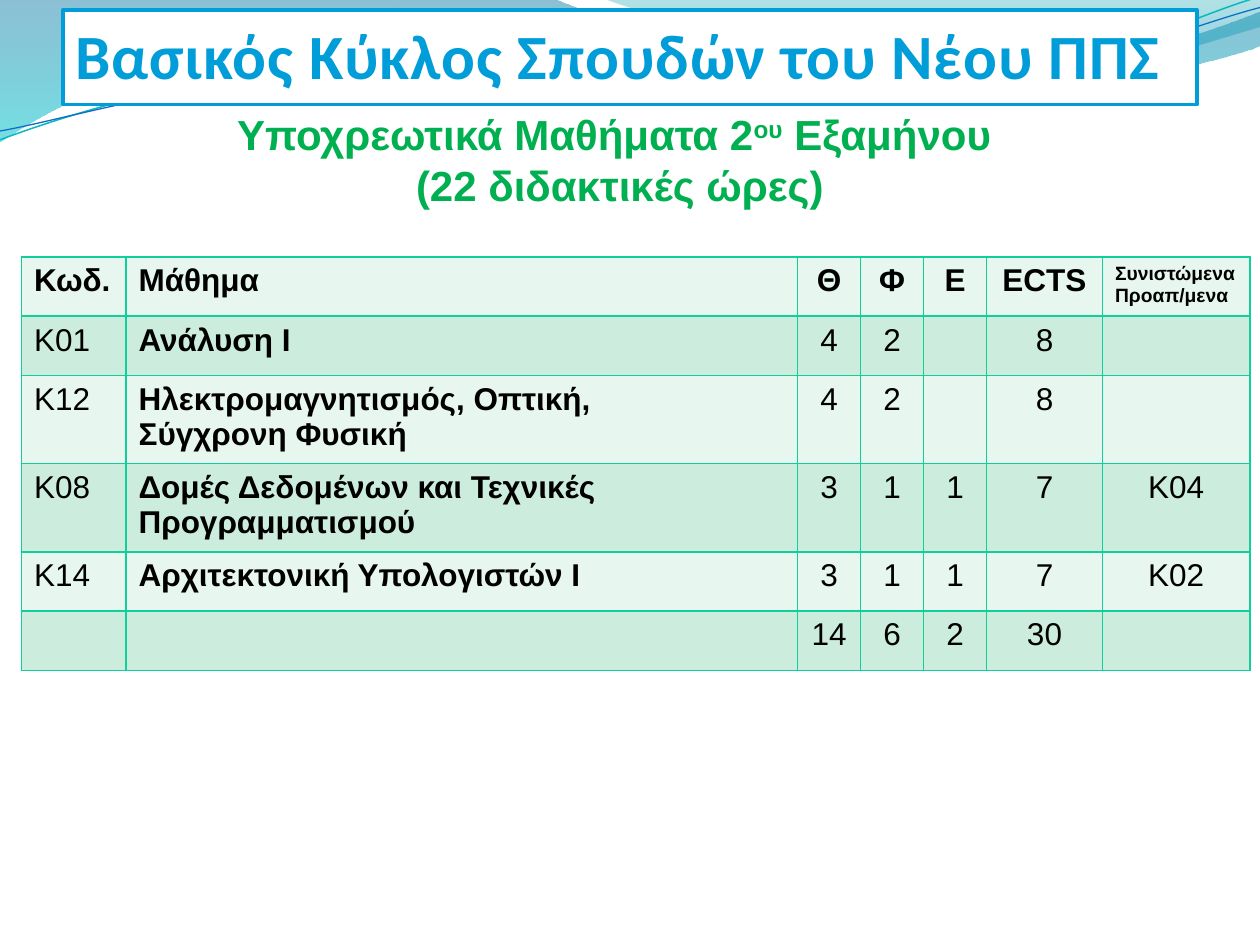
from pptx import Presentation
from pptx import util as u
from pptx.dml.color import RGBColor
from pptx.enum import text as t
from pptx.oxml import parse_xml
from pptx.oxml.ns import nsdecls, qn
from lxml import etree

COLORS = {
    "white": "FFFFFF", "black": "000000", "title": "009DD9", "subtitle": "00B050",
    "border": "10CF9B", "light": "E7F6EF", "dark": "CCEDDE",
    "deep_blue": "0074A1", "cyan": "00C6CF", "teal": "00A1A9", "blue": "008BBF",
    "teal_line": "0AB8BF", "blue_line": "0F6FC6",
}
LEFT, CENTER = t.PP_ALIGN.LEFT, t.PP_ALIGN.CENTER
UNITS = 1000  # outline units per inch


def color(name):
    return RGBColor.from_string(COLORS[name])


def write(paragraph, content, size=18, font="Arial", fill="black", bold=False,
          align=LEFT, **attributes):
    """Add text to a paragraph; a newline becomes a line break."""
    paragraph.alignment = align
    for index, line in enumerate(content.split("\n")):
        if index:
            paragraph.add_line_break()
        run = paragraph.add_run()
        run.text = line
        run.font.size, run.font.name, run.font.bold = u.Pt(size), font, bold
        run.font.color.rgb = color(fill)
        for key, value in attributes.items():
            run.font._element.set(key, str(value))


class SlideBuilder:
    def __init__(self, presentation):
        self.slide = presentation.slides.add_slide(presentation.slide_layouts[5])
        self.shapes = self.slide.shapes

    def outline(self, start, segments, close):
        """Draw line (x, y) and cubic curve (six numbers) segments."""
        points = [(segment[i] * UNITS, segment[i + 1] * UNITS)
                  for segment in segments for i in range(0, len(segment), 2)]
        builder = self.shapes.build_freeform(
            start[0] * UNITS, start[1] * UNITS, scale=u.Inches(1) / UNITS)
        builder.add_line_segments(points, close=close)
        shape = builder.convert_to_shape()
        shape.shadow.inherit = False
        lines = iter(list(shape._element.iter(qn("a:lnTo"))))
        for segment in segments:
            first = next(lines)
            if len(segment) == 6:  # merge three points into one curve
                first.tag = qn("a:cubicBezTo")
                for extra in (next(lines), next(lines)):
                    first.append(extra[0])
                    extra.getparent().remove(extra)
        return shape

    def wave(self, start, segments, stops):
        """Filled wave; each stop is (position, colour, opacity percent)."""
        shape = self.outline(start, segments, True)
        shape.line.fill.background()
        shape.fill.gradient()
        shape.fill.gradient_angle = 270
        for stop, (position, name, _) in zip(shape.fill.gradient_stops, stops):
            stop.position = position
            stop.color.rgb = color(name)
        stop_colors = shape._element.spPr.iter(qn("a:srgbClr"))
        for element, (_, _, opacity) in zip(list(stop_colors), stops):
            etree.SubElement(element, qn("a:alpha")).set("val", str(opacity * 1000))

    def curve(self, start, segments, name, width):
        shape = self.outline(start, segments, False)
        shape.fill.background()
        shape.line.color.rgb = color(name)
        shape.line.width = u.Pt(width)

    def title(self, content, left, top, width, height):
        shape = self.shapes.title
        self.shapes._spTree.append(shape._element)  # bring in front of the waves
        shape.left, shape.top = u.Inches(left), u.Inches(top)
        shape.width, shape.height = u.Inches(width), u.Inches(height)
        shape.fill.solid()
        shape.fill.fore_color.rgb = color("white")
        shape.line.color.rgb = color("title")
        shape.line.width = u.Pt(2)
        frame = shape.text_frame
        frame.word_wrap, frame.auto_size = True, t.MSO_AUTO_SIZE.NONE
        frame.vertical_anchor = t.MSO_ANCHOR.TOP
        write(frame.paragraphs[0], content, size=36, font="Calibri", fill="title",
              bold=True, spc=50)

    def subtitle(self, parts, left, top, width, height):
        box = self.shapes.add_textbox(*map(u.Inches, (left, top, width, height)))
        frame = box.text_frame
        frame.word_wrap = True
        frame.vertical_anchor = t.MSO_ANCHOR.MIDDLE
        for content, baseline in parts:
            write(frame.paragraphs[0], content, size=24, fill="subtitle", bold=True,
                  align=CENTER, baseline=baseline)

    def border(self, cell):
        properties = cell._tc.get_or_add_tcPr()
        for index, side in enumerate("LRTB"):
            properties.insert(index, parse_xml(
                f'<a:ln{side} {nsdecls("a")} w="12700"><a:solidFill>'
                f'<a:srgbClr val="{COLORS["border"]}"/></a:solidFill></a:ln{side}>'))

    def table(self, rows, widths, row_height, left, top, height):
        frame = self.shapes.add_table(
            len(rows), len(widths), u.Inches(left), u.Inches(top),
            u.Inches(sum(widths)), u.Inches(height))
        table = frame.table
        table.first_row = table.horz_banding = False
        for column, width in zip(table.columns, widths):
            column.width = u.Inches(width)
        for r, values in enumerate(rows):
            table.rows[r].height = u.Inches(row_height)
            for c, value in enumerate(values):
                cell = table.cell(r, c)
                cell.fill.solid()
                cell.fill.fore_color.rgb = color("dark" if r % 2 else "light")
                self.border(cell)
                note = r == 0 and c == len(widths) - 1
                if value:
                    write(cell.text_frame.paragraphs[0], value, size=11 if note else 18,
                          bold=r == 0 or c == 1, align=LEFT if c < 2 or note else CENTER)
        frame.height = u.Inches(height)


def main():
    presentation = Presentation()
    presentation.slide_width, presentation.slide_height = u.Inches(10), u.Inches(7.5)
    builder = SlideBuilder(presentation)

    # Decorative waves along the top edge
    builder.wave((0, -0.01), [
        (4.4, -0.01), (4.76, 0.17, 6.64, 0.63, 7.58, 0.63),
        (8.53, 0.63, 9.58, 0.26, 10, 0.09), (10.01, 0.36),
        (9.83, 0.44, 8.7, 0.76, 7.46, 0.75), (6.22, 0.75, 3.82, 0.28, 2.57, 0.34),
        (1.29, 0.35, 0.46, 0.83, -0.01, 1.13),
    ], [(0, "deep_blue", 45), (1, "cyan", 55)])
    builder.wave((4.79, -0.01), [
        (5.09, 0.11, 6.82, 0.62, 7.69, 0.65), (8.56, 0.69, 9.61, 0.32, 10, 0.21), (10, 0),
    ], [(0, "teal", 30), (0.8, "blue", 45)])
    builder.curve((0, 1.11), [
        (0.48, 0.93, 1.58, 0.57, 2.77, 0.52), (3.95, 0.47, 5.93, 0.89, 7.13, 0.8),
        (8.33, 0.71, 9.38, 0.15, 9.98, -0.02),
    ], "teal_line", 0.85)
    builder.curve((0, 1.04), [
        (0.47, 0.96, 1.64, 0.61, 2.83, 0.56), (4.03, 0.51, 5.97, 0.83, 7.17, 0.75),
        (8.36, 0.67, 9.41, 0.21, 10, 0.06),
    ], "blue_line", 0.75)

    # Semester heading
    builder.subtitle([("Υποχρεωτικά Μαθήματα 2", 0), ("ου", 30000),
                      (" Εξαμήνου \n(22 διδακτικές ώρες)", 0)], 0.17, 0.83, 9.5, 0.87)

    # Course table
    builder.table([
        ("Κωδ.", "Μάθημα", "Θ", "Φ", "Ε", "ECTS", "Συνιστώμενα Προαπ/μενα"),
        ("Κ01", "Ανάλυση Ι", "4", "2", "", "8", ""),
        ("Κ12", "Ηλεκτρομαγνητισμός, Οπτική, \nΣύγχρονη Φυσική", "4", "2", "", "8", ""),
        ("Κ08", "Δομές Δεδομένων και Τεχνικές Προγραμματισμού", "3", "1", "1", "7", "Κ04"),
        ("Κ14", "Αρχιτεκτονική Υπολογιστών Ι", "3", "1", "1", "7", "K02"),
        ("", "", "14", "6", "2", "30", ""),
    ], [0.83, 5.33, 0.5, 0.5, 0.5, 0.92, 1.17], 0.47, 0.17, 2.04, 3.29)

    # Title in its frame
    builder.title("Βασικός Κύκλος Σπουδών του Νέου ΠΠΣ", 0.5, 0.08, 9, 0.75)
    presentation.save("out.pptx")


if __name__ == "__main__":
    main()
